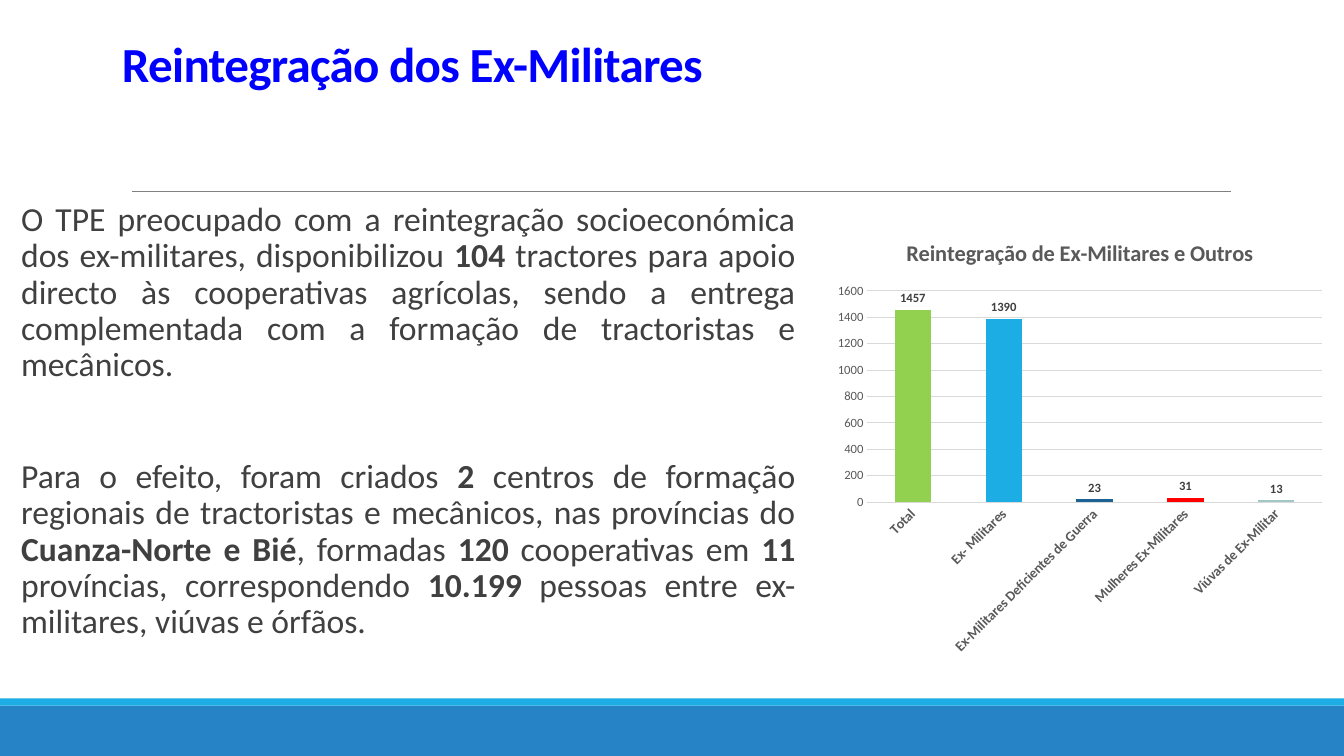
from lxml.etree import SubElement
from pptx import Presentation
from pptx.chart.data import CategoryChartData
from pptx.dml.color import RGBColor
from pptx.enum.chart import XL_CHART_TYPE, XL_LABEL_POSITION, XL_TICK_MARK
from pptx.enum.shapes import MSO_CONNECTOR, MSO_SHAPE
from pptx.enum.text import MSO_ANCHOR, MSO_AUTO_SIZE, PP_ALIGN
from pptx.oxml.ns import qn
from pptx.util import Inches, Pt

FONT = "Calibri"
TITLE = "Reintegração dos Ex-Militares"
# Bold passages stand between asterisks
BODY = [
    "O TPE preocupado com a reintegração socioeconómica dos ex-militares, "
    "disponibilizou *104* tractores para apoio directo às cooperativas agrícolas, "
    "sendo a entrega complementada com a formação de tractoristas e mecânicos.",
    "Para o efeito, foram criados *2* centros de formação regionais de tractoristas "
    "e mecânicos, nas províncias do *Cuanza-Norte e Bié*, formadas *120* cooperativas "
    "em *11* províncias, correspondendo *10.199* pessoas entre ex-militares, viúvas "
    "e órfãos.",
]
CHART_TITLE = "Reintegração de Ex-Militares e Outros"
BENEFICIARIES = [
    ("Total", 1457, "92D050"),
    ("Ex- Militares", 1390, "1CADE4"),
    ("Ex-Militares Deficientes de Guerra", 23, "1D6294"),
    ("Mulheres Ex-Militares", 31, "FF0000"),
    ("Viúvas de Ex-Militar", 13, "A1C8C5"),
]


def color(value):
    return RGBColor.from_string(value)


def set_font(font, size, value, bold=None):
    font.name = FONT
    font.size = Pt(size)
    font.color.rgb = color(value)
    font.bold = bold


def place(shape, box):
    shape.left, shape.top, shape.width, shape.height = [Inches(n) for n in box]


def add_band(page, box, fill):
    band = page.shapes.add_shape(MSO_SHAPE.RECTANGLE, *[Inches(n) for n in box])
    band.shadow.inherit = False
    band.fill.solid()
    band.fill.fore_color.rgb = color(fill)
    band.line.fill.background()


def add_frame(page, box):
    """Footer bands at the bottom of the box and the rule below the title."""
    left, top, width, height = box
    bottom = top + height
    add_band(page, (left, bottom - 0.5, width, 0.5), "2683C6")
    add_band(page, (left, bottom - 0.57, width, 0.07), "1CADE4")
    rule = page.shapes.add_connector(
        MSO_CONNECTOR.STRAIGHT, Inches(left + 1.31), Inches(top + 1.9),
        Inches(left + 12.21), Inches(top + 1.9))
    rule.line.color.rgb = color("808080")
    rule.line.width = Pt(0.5)
    SubElement(rule._element.spPr, qn("a:effectLst"))


def add_title(page, box):
    title = page.shapes.title
    place(title, box)
    frame = title.text_frame
    frame.text = TITLE
    frame.auto_size = MSO_AUTO_SIZE.NONE
    frame.vertical_anchor = MSO_ANCHOR.BOTTOM
    para = frame.paragraphs[0]
    para.alignment = PP_ALIGN.LEFT
    para.line_spacing = 0.85
    set_font(para.font, 35, "0000FF", True)
    para.runs[0]._r.get_or_add_rPr().set("spc", "-50")


def add_body(page, box):
    body = page.placeholders[1]
    place(body, box)
    frame = body.text_frame
    frame.auto_size = MSO_AUTO_SIZE.NONE
    frame.vertical_anchor = MSO_ANCHOR.TOP
    frame.margin_left = frame.margin_right = 0
    for index, text in enumerate(BODY):
        para = frame.add_paragraph() if index else frame.paragraphs[0]
        para.alignment = PP_ALIGN.JUSTIFY
        para.line_spacing = 0.9
        para.space_before = Pt(52 if index else 12)
        para.space_after = Pt(2)
        set_font(para.font, 24, "404040")
        # No bullet and no indent
        properties = para._p.get_or_add_pPr()
        properties.set("marL", "0")
        properties.set("indent", "0")
        properties.insert_element_before(
            properties.makeelement(qn("a:buNone")), "a:tabLst", "a:defRPr", "a:extLst")
        for part, words in enumerate(text.split("*")):
            span = para.add_run()
            span.text = words
            span.font.bold = part % 2 == 1


def style_axes(chart):
    categories, values = chart.category_axis, chart.value_axis
    for axis in (categories, values):
        axis.major_tick_mark = axis.minor_tick_mark = XL_TICK_MARK.NONE
        axis.format.line.fill.background()
    set_font(categories.tick_labels.font, 10, "595959", True)
    set_font(values.tick_labels.font, 9, "595959")
    # Slanted category names
    categories._element.find(qn("c:txPr")).find(qn("a:bodyPr")).set("rot", "-2700000")
    values.minimum_scale, values.maximum_scale, values.major_unit = 0, 1600, 200
    grid = values.major_gridlines.format.line
    grid.color.rgb = color("D9D9D9")
    grid.width = Pt(0.75)


def add_beneficiary_chart(page, box):
    names, counts, fills = zip(*BENEFICIARIES)
    data = CategoryChartData()
    data.categories = names
    data.add_series("Series 1", counts)
    chart = page.shapes.add_chart(
        XL_CHART_TYPE.COLUMN_CLUSTERED, *[Inches(n) for n in box], data).chart
    set_font(chart.font, 10, "000000")
    chart.has_legend = False
    chart.has_title = True
    heading = chart.chart_title.text_frame
    heading.text = CHART_TITLE
    set_font(heading.paragraphs[0].font, 16, "595959", True)
    style_axes(chart)

    # Columns and their values
    plot = chart.plots[0]
    plot.gap_width = 150
    plot.vary_by_categories = False
    series = plot.series[0]
    series.format.fill.solid()
    series.format.fill.fore_color.rgb = color("1CADE4")
    for index, fill in enumerate(fills):
        column = series.points[index].format.fill
        column.solid()
        column.fore_color.rgb = color(fill)
    labels = series.data_labels
    labels.show_value = True
    labels.position = XL_LABEL_POSITION.OUTSIDE_END
    set_font(labels.font, 9, "404040", True)


def main():
    deck = Presentation()
    deck.slide_width, deck.slide_height = Inches(13.33), Inches(7.5)
    page = deck.slides.add_slide(deck.slide_layouts[1])
    add_frame(page, (0, 0, 13.33, 7.5))
    add_title(page, (1.11, 0.29, 11.78, 0.68))
    add_body(page, (0.21, 1.96, 7.68, 5.69))
    add_beneficiary_chart(page, (8.21, 2.18, 5, 4.4))
    deck.save("out.pptx")


if __name__ == "__main__":
    main()
